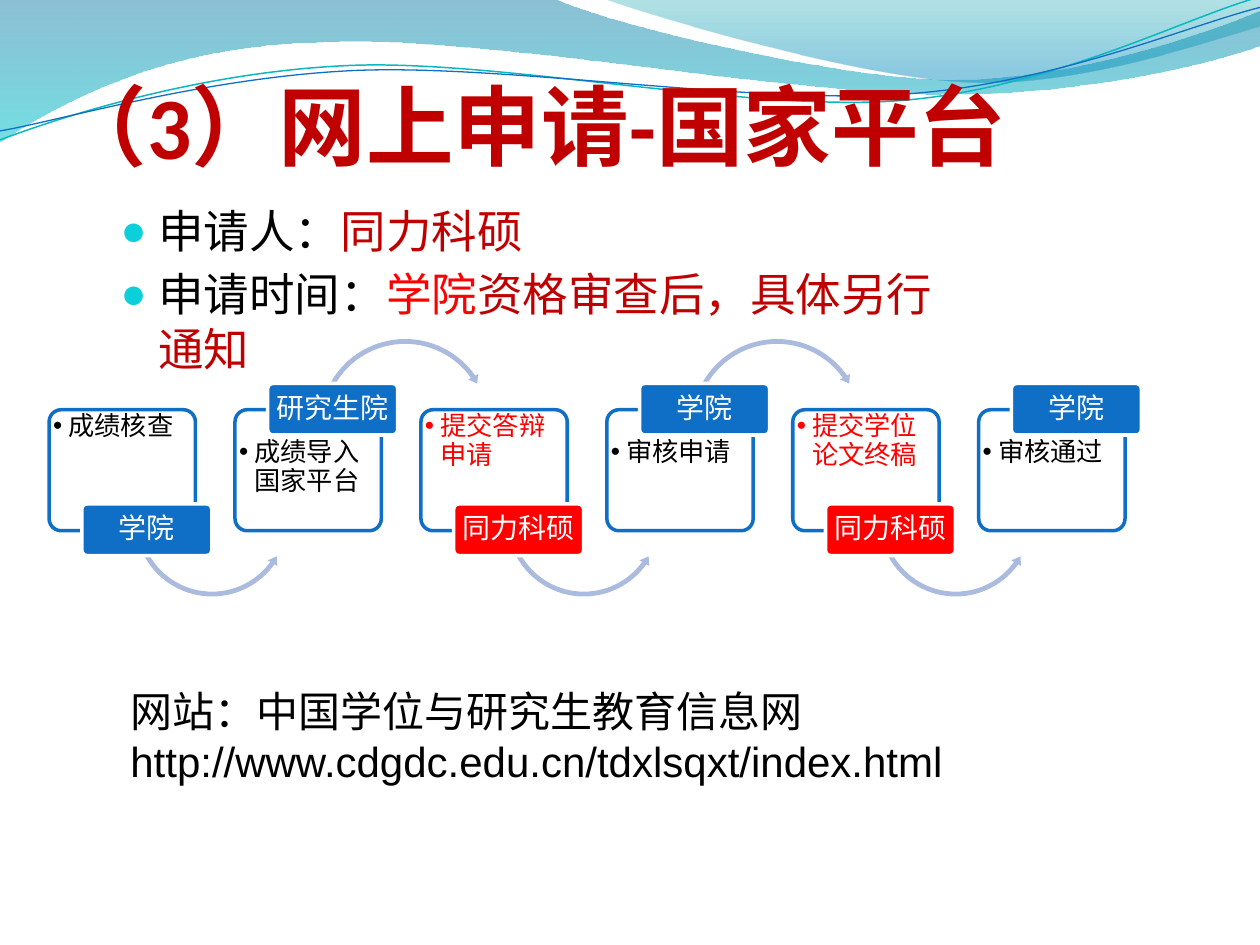
import math
import pptx
import pptx.util
import pptx.dml.color
import pptx.enum.shapes
import pptx.enum.text
import pptx.oxml.ns
from dataclasses import dataclass
from lxml import etree

Cm = pptx.util.Cm
Pt = pptx.util.Pt
SHAPE = pptx.enum.shapes.MSO_SHAPE
ALIGN = pptx.enum.text.PP_ALIGN
ANCHOR = pptx.enum.text.MSO_ANCHOR
qn = pptx.oxml.ns.qn


@dataclass(frozen=True)
class Theme:
    blue: str = "0F6FC6"
    teal: str = "0AB8BF"
    bullet: str = "0BD0D9"
    arrow: str = "ABBBDF"
    red: str = "FF0000"
    dark_red: str = "C00000"
    black: str = "000000"
    white: str = "FFFFFF"
    heading_font: str = "Calibri"
    body_font: str = "Cambria"
    note_font: str = "Arial"
    title_size: int = 50
    body_size: int = 26
    note_size: int = 24
    label_size: int = 16
    step_size: int = 15


T = Theme()

# Header curves in cm: a start point, then lines (2 numbers) or Bezier curves (6 numbers)
WAVES = [
    ([(-.02, -.02), (11.18, -.02), (12.09, .43, 16.87, 1.6, 19.25, 1.6),
      (21.67, 1.6, 24.33, .66, 25.4, .23), (25.43, .91),
      (24.97, 1.12, 22.1, 1.93, 18.95, 1.9), (15.8, 1.9, 9.7, .71, 6.53, .86),
      (3.28, .89, 1.17, 2.11, -.02, 2.87)],
     [(0, "0074A1", 45), (1, "00C6CF", 55)]),
    ([(12.17, -.02), (12.93, .28, 17.32, 1.57, 19.53, 1.65),
      (21.74, 1.75, 24.41, .81, 25.4, .53), (25.4, 0)],
     [(0, "00A1A9", 30), (.8, "008BBF", 45)]),
]
TILT = -2.7  # degrees the strands are turned, about the centre given for each
STRANDS = [
    ([(0, 2.82), (1.22, 2.36, 4.01, 1.45, 7.04, 1.32),
      (10.03, 1.19, 15.06, 2.26, 18.11, 2.03), (21.16, 1.8, 23.83, .38, 25.35, -.05)],
     (12.67, 1.46), T.teal, .85),
    ([(0, 2.64), (1.19, 2.44, 4.17, 1.55, 7.19, 1.42),
      (10.24, 1.3, 15.16, 2.11, 18.21, 1.9), (21.23, 1.7, 23.9, .53, 25.4, .15)],
     (12.69, 1.5), T.blue, .75),
]
# Step text, text colour, label, label colour
STEPS = [
    ("成绩核查", T.black, "学院", T.blue),
    ("成绩导入国家平台", T.black, "研究生院", T.blue),
    ("提交答辩申请", T.red, "同力科硕", T.red),
    ("审核申请", T.black, "学院", T.blue),
    ("提交学位论文终稿", T.red, "同力科硕", T.red),
    ("审核通过", T.black, "学院", T.blue),
]


def rgb(color):
    return pptx.dml.color.RGBColor.from_string(color)


def set_alpha(clr, percent):
    etree.SubElement(clr, qn("a:alpha")).set("val", str(percent * 1000))


def add_run(p, text, font, size, color, bold=False):
    r = p.add_run()
    r.text = text
    r.font.name, r.font.size, r.font.bold = font, Pt(size), bold
    r.font.color.rgb = rgb(color)


def set_bullet(p, char, indent, color=None, percent=None):
    pPr = p._p.get_or_add_pPr()
    pPr.set("marL", str(Cm(indent)))
    pPr.set("indent", str(-Cm(indent)))
    if color:
        clr = etree.SubElement(pPr, qn("a:buClr"))
        etree.SubElement(clr, qn("a:srgbClr")).set("val", color)
    if percent:
        etree.SubElement(pPr, qn("a:buSzPct")).set("val", str(percent * 1000))
    etree.SubElement(pPr, qn("a:buFont")).set("typeface", "Arial")
    etree.SubElement(pPr, qn("a:buChar")).set("char", char)


def set_frame(tf, anchor, left, top, right, bottom):
    tf.word_wrap = True
    tf.auto_size = pptx.enum.text.MSO_AUTO_SIZE.NONE
    tf.vertical_anchor = anchor
    tf.margin_left, tf.margin_top = Cm(left), Cm(top)
    tf.margin_right, tf.margin_bottom = Cm(right), Cm(bottom)


def place(sp, box):
    sp.left, sp.top, sp.width, sp.height = (Cm(v) for v in box)


def add_block(slide, kind, box, fill, line=None, adj=(.1,)):
    sp = slide.shapes.add_shape(kind, *(Cm(v) for v in box))
    sp.shadow.inherit = False
    for i, value in enumerate(adj):
        sp.adjustments[i] = value
    sp.fill.solid()
    sp.fill.fore_color.rgb = rgb(fill)
    if line:
        sp.line.color.rgb = rgb(line)
        sp.line.width = Pt(2)
    else:
        sp.line.fill.background()
    return sp


def turn(point, center, degrees):
    a = math.radians(degrees)
    dx, dy = point[0] - center[0], point[1] - center[1]
    return (center[0] + dx * math.cos(a) - dy * math.sin(a),
            center[1] + dx * math.sin(a) + dy * math.cos(a))


def add_curve(slide, box, segments, close, center=(0, 0), tilt=0):
    pts = [seg[i:i + 2] for seg in segments for i in range(0, len(seg), 2)]
    pts = [turn(pt, center, -tilt) for pt in pts]
    pts = [(Cm(box[0] + x), Cm(box[1] + y)) for x, y in pts]
    fb = slide.shapes.build_freeform(*pts[0])
    fb.add_line_segments(pts[1:], close=close)
    sp = fb.convert_to_shape()
    sp.shadow.inherit = False
    sp.rotation = tilt
    # Join each three points of a curve into one Bezier segment
    lines = iter(list(sp._element.spPr.iter(qn("a:lnTo"))))
    for seg in segments[1:]:
        first = next(lines)
        if len(seg) == 6:
            first.tag = qn("a:cubicBezTo")
            for extra in (next(lines), next(lines)):
                first.append(extra[0])
                extra.getparent().remove(extra)
    return sp


def add_header(slide, box):
    for segments, stops in WAVES:
        sp = add_curve(slide, box, segments, True)
        sp.line.fill.background()
        sp.fill.gradient()
        sp.fill.gradient_angle = 270
        for stop, (pos, color, _) in zip(sp.fill.gradient_stops, stops):
            stop.position = pos
            stop.color.rgb = rgb(color)
        for clr, (_, _, alpha) in zip(sp._element.spPr.iter(qn("a:srgbClr")), stops):
            set_alpha(clr, alpha)
    for segments, center, color, width in STRANDS:
        sp = add_curve(slide, box, segments, False, center, TILT)
        sp.fill.background()
        sp.line.color.rgb = rgb(color)
        sp.line.width = Pt(width)


def add_step(slide, box, step, label_on_top, has_arrow):
    x, y, w, h = box
    text, color, label, label_color = step
    # Outlined box with its bullet
    sp = add_block(slide, SHAPE.ROUNDED_RECTANGLE, box, T.white, T.blue)
    set_alpha(next(sp._element.spPr.iter(qn("a:srgbClr"))), 90)
    set_frame(sp.text_frame, ANCHOR.TOP, .01, .52 if label_on_top else 0, 0, 0)
    p = sp.text_frame.paragraphs[0]
    set_bullet(p, "•", .31)
    p.alignment, p.line_spacing = ALIGN.LEFT, .9
    add_run(p, text, T.body_font, T.step_size, color)
    # Curved arrow to the next step
    if has_arrow and label_on_top:
        add_block(slide, SHAPE.CIRCULAR_ARROW, (x + 1.64, y - 1.49, 3.58, 3.58), T.arrow,
                  adj=(.027, 3.303, 194.942, 125.755, .032))
    elif has_arrow:
        add_block(slide, SHAPE.LEFT_CIRCULAR_ARROW, (x + 1.67, y + .6, 3.23, 3.23), T.arrow,
                  adj=(.03, 3.718, 21.473, 90.245, .035))
    # Label of who acts
    label_y = y - .53 if label_on_top else y + 1.9
    sp = add_block(slide, SHAPE.ROUNDED_RECTANGLE, (x + .66, label_y, 2.62, 1.04),
                   label_color, T.white)
    set_frame(sp.text_frame, ANCHOR.MIDDLE, .03, .02, .03, .02)
    p = sp.text_frame.paragraphs[0]
    p.alignment, p.line_spacing = ALIGN.CENTER, .9
    add_run(p, label, T.body_font, T.label_size, T.white)


def add_flow(slide, box):
    x, y, w, h = box
    step_w = 2.95
    pitch = (w - step_w) / (len(STEPS) - 1)
    for i, step in enumerate(STEPS):
        add_step(slide, (x + i * pitch, y, step_w, h), step, i % 2 == 1, i < len(STEPS) - 1)


def add_title(slide, box):
    sp = slide.shapes.title
    place(sp, box)
    slide.shapes._spTree.append(sp._element)
    set_frame(sp.text_frame, ANCHOR.BOTTOM, 0, .13, 0, 0)
    p = sp.text_frame.paragraphs[0]
    p.alignment = ALIGN.LEFT
    add_run(p, "（3）网上申请-国家平台", T.heading_font, T.title_size, T.dark_red, True)


def add_body(slide, box):
    sp = slide.placeholders[1]
    place(sp, box)
    slide.shapes._spTree.append(sp._element)
    set_frame(sp.text_frame, ANCHOR.TOP, .25, .13, .25, .13)
    lines = [
        [("申请人：", T.black), ("同力科硕", T.dark_red)],
        [("申请时间：", T.black), ("学院", T.red), ("资格审查后，具体另行通知", T.dark_red)],
    ]
    for i, runs in enumerate(lines):
        p = sp.text_frame.add_paragraph() if i else sp.text_frame.paragraphs[0]
        set_bullet(p, "●", .76, T.bullet, 95)
        p.space_before = Pt(5 if i else 0)
        for text, color in runs:
            add_run(p, text, T.body_font, T.body_size, color)


def add_website(slide, box):
    tf = slide.shapes.add_textbox(*(Cm(v) for v in box)).text_frame
    tf.word_wrap = True
    lines = ["网站：中国学位与研究生教育信息网", "http://www.cdgdc.edu.cn/tdxlsqxt/index.html"]
    for i, text in enumerate(lines):
        p = tf.add_paragraph() if i else tf.paragraphs[0]
        add_run(p, text, T.note_font, T.note_size, T.black)


def main():
    prs = pptx.Presentation()
    prs.slide_width, prs.slide_height = Cm(25.4), Cm(19.05)
    slide = prs.slides.add_slide(prs.slide_layouts[1])
    add_header(slide, (0, 0, 25.4, 2.87))
    add_flow(slide, (.99, 8.26, 21.69, 2.44))
    add_title(slide, (1.2, .4, 22.86, 3.16))
    add_body(slide, (2.18, 3.96, 17.2, 2.8))
    add_website(slide, (2.38, 13.69, 18.06, 2.31))
    prs.save("out.pptx")


if __name__ == "__main__":
    main()
